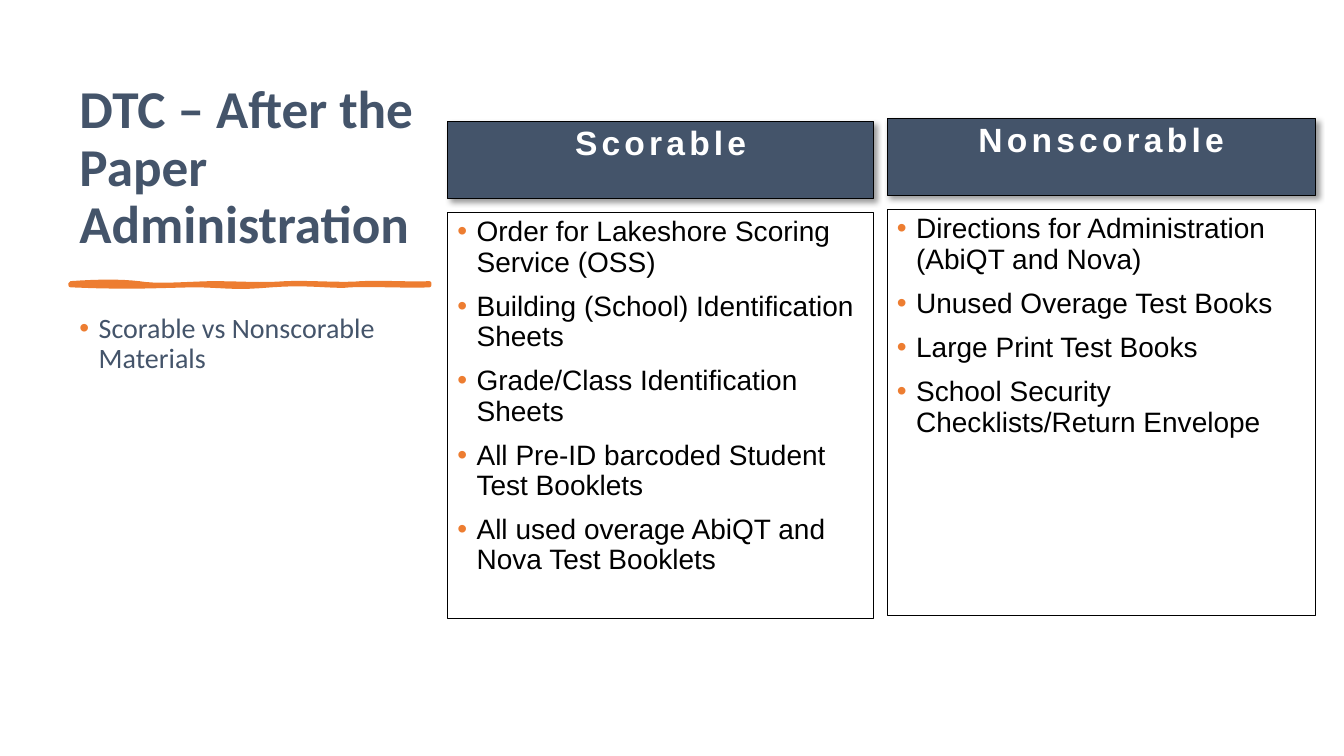
from collections import namedtuple
from dataclasses import dataclass

from lxml import etree
from pptx import Presentation
from pptx import util as u
from pptx.dml.color import RGBColor
from pptx.enum import shapes, text
from pptx.oxml.ns import qn

Box = namedtuple("Box", "x y w h")


@dataclass(frozen=True)
class Theme:
    navy: str = "44546A"
    orange: str = "ED7D31"
    black: str = "000000"
    white: str = "FFFFFF"
    head_font: str = "Calibri"
    body_font: str = "Arial"
    title: int = 38
    header: int = 24
    body: int = 20


T = Theme()
COLS, ROWS = 160, 90
SLIDE_W, SLIDE_H = u.Inches(13.333), u.Inches(7.5)
INDENT = u.Inches(0.19)

STROKE_TOP = [
    (0, 0), (0.08, -1), (0.14, -1), (0.19, 0), (0.24, 1.5), (0.3, 0.5),
    (0.39, 0), (0.48, 0), (0.53, 1), (0.6, 0), (0.67, -0.5), (0.76, 1),
    (0.81, 0), (0.87, -0.5), (0.96, 0.5), (1, 0),
]
STROKE_BOTTOM = [
    (1, 1), (0.95, 1.5), (0.83, 0.5), (0.78, 1), (0.74, 2), (0.66, -0.5),
    (0.56, 1), (0.46, 2.5), (0.45, 1.5), (0.36, 1), (0.27, 1), (0.18, 2.5),
    (0, 1),
]

TITLE = "DTC – After the Paper Administration"
TOPICS = ["Scorable vs Nonscorable Materials"]
SCORABLE = [
    "Order for Lakeshore Scoring Service (OSS)",
    "Building (School) Identification Sheets",
    "Grade/Class Identification Sheets",
    "All Pre-ID barcoded Student Test Booklets",
    "All used overage AbiQT and Nova Test Booklets",
]
NONSCORABLE = [
    "Directions for Administration (AbiQT and Nova)",
    "Unused Overage Test Books",
    "Large Print Test Books",
    "School Security Checklists/Return Envelope",
]


def rgb(color):
    return RGBColor.from_string(color)


def emu(box):
    return Box(*(round(v * size / n) for v, size, n in zip(
        box, (SLIDE_W, SLIDE_H) * 2, (COLS, ROWS) * 2)))


def add_bullet(p):
    pPr = p._p.get_or_add_pPr()
    pPr.set("marL", str(INDENT))
    pPr.set("indent", str(-INDENT))
    color = etree.SubElement(pPr, qn("a:buClr"))
    etree.SubElement(color, qn("a:srgbClr"), val=T.orange)
    etree.SubElement(pPr, qn("a:buFont"), typeface="Arial")
    etree.SubElement(pPr, qn("a:buChar"), char="•")


def write(sp, lines, font, size, color, bold=False, bullets=False,
          align=text.PP_ALIGN.LEFT, anchor=text.MSO_ANCHOR.TOP, spacing=0):
    tf = sp.text_frame
    tf.word_wrap = True
    tf.vertical_anchor = anchor
    for i, line in enumerate(lines):
        p = tf.add_paragraph() if i else tf.paragraphs[0]
        p.alignment = align
        p.line_spacing = 0.9
        p.space_before = u.Pt(10 if i else 0)
        if bullets:
            add_bullet(p)
        r = p.add_run()
        r.text = line
        r.font.name, r.font.size, r.font.bold = font, u.Pt(size), bold
        r.font.color.rgb = rgb(color)
        if spacing:
            r._r.get_or_add_rPr().set("spc", str(spacing * 100))


def add_panel(s, box, fill=None):
    sp = s.shapes.add_shape(shapes.MSO_SHAPE.RECTANGLE, *emu(box))
    sp.shadow.inherit = False
    if fill:
        sp.fill.solid()
        sp.fill.fore_color.rgb = rgb(fill)
    else:
        sp.fill.background()
    sp.line.color.rgb = rgb(T.black)
    sp.line.width = u.Pt(0.75)
    return sp


def add_shadow(sp):
    effects = sp._element.spPr.find(qn("a:effectLst"))
    shadow = etree.SubElement(
        effects, qn("a:outerShdw"), blurRad=str(u.Pt(4)), dist=str(u.Pt(3)),
        dir="2700000", algn="tl", rotWithShape="0")
    color = etree.SubElement(shadow, qn("a:srgbClr"), val=T.black)
    etree.SubElement(color, qn("a:alpha"), val="40000")


def curve(knots, steps=8):
    points = [knots[0]]
    for i in range(0, len(knots) - 1, 3):
        a, b, c, d = knots[i:i + 4]
        for k in range(1, steps + 1):
            t = k / steps
            v = 1 - t
            weights = (v ** 3, 3 * v * v * t, 3 * v * t * t, t ** 3)
            points.append(tuple(
                sum(w * q[axis] for w, q in zip(weights, (a, b, c, d)))
                for axis in (0, 1)))
    return points


def brush_stroke(s, box):
    b = emu(box)
    points = [(b.x + px * b.w, b.y + py * b.h)
              for px, py in curve(STROKE_TOP) + curve(STROKE_BOTTOM)]
    builder = s.shapes.build_freeform(*points[0])
    builder.add_line_segments(points[1:], close=True)
    sp = builder.convert_to_shape()
    sp.shadow.inherit = False
    sp.fill.solid()
    sp.fill.fore_color.rgb = rgb(T.orange)
    sp.line.color.rgb = rgb(T.orange)
    sp.line.width = u.Pt(3)
    etree.SubElement(sp.line._get_or_add_ln(), qn("a:round"))


def intro(s, box):
    title = s.shapes.add_textbox(*emu(box._replace(h=22.56)))
    write(title, [TITLE], T.head_font, T.title, T.navy, bold=True,
          anchor=text.MSO_ANCHOR.BOTTOM)
    brush_stroke(s, Box(box.x + 0.12, box.y + 25.32, 42.72, 0.24))
    topics = s.shapes.add_textbox(
        *emu(box._replace(y=box.y + 28.44, h=box.h - 28.44)))
    write(topics, TOPICS, T.head_font, T.body, T.navy, bullets=True)


def material_column(s, box, heading, items):
    header = add_panel(s, box._replace(h=9.12), T.navy)
    add_shadow(header)
    write(header, [heading], T.body_font, T.header, T.white, bold=True,
          align=text.PP_ALIGN.CENTER, spacing=3)
    body = add_panel(s, box._replace(y=box.y + 10.8, h=box.h - 10.8))
    write(body, items, T.body_font, T.body, T.black, bullets=True)


def main():
    prs = Presentation()
    prs.slide_width, prs.slide_height = SLIDE_W, SLIDE_H
    s = prs.slides.add_slide(prs.slide_layouts[6])
    intro(s, Box(8.28, 8.4, 45, 73.2))
    material_column(s, Box(53.28, 14.52, 50.76, 59.16), "Scorable", SCORABLE)
    material_column(s, Box(105.6, 14.16, 51, 59.16), "Nonscorable", NONSCORABLE)
    prs.save("out.pptx")


if __name__ == "__main__":
    main()
